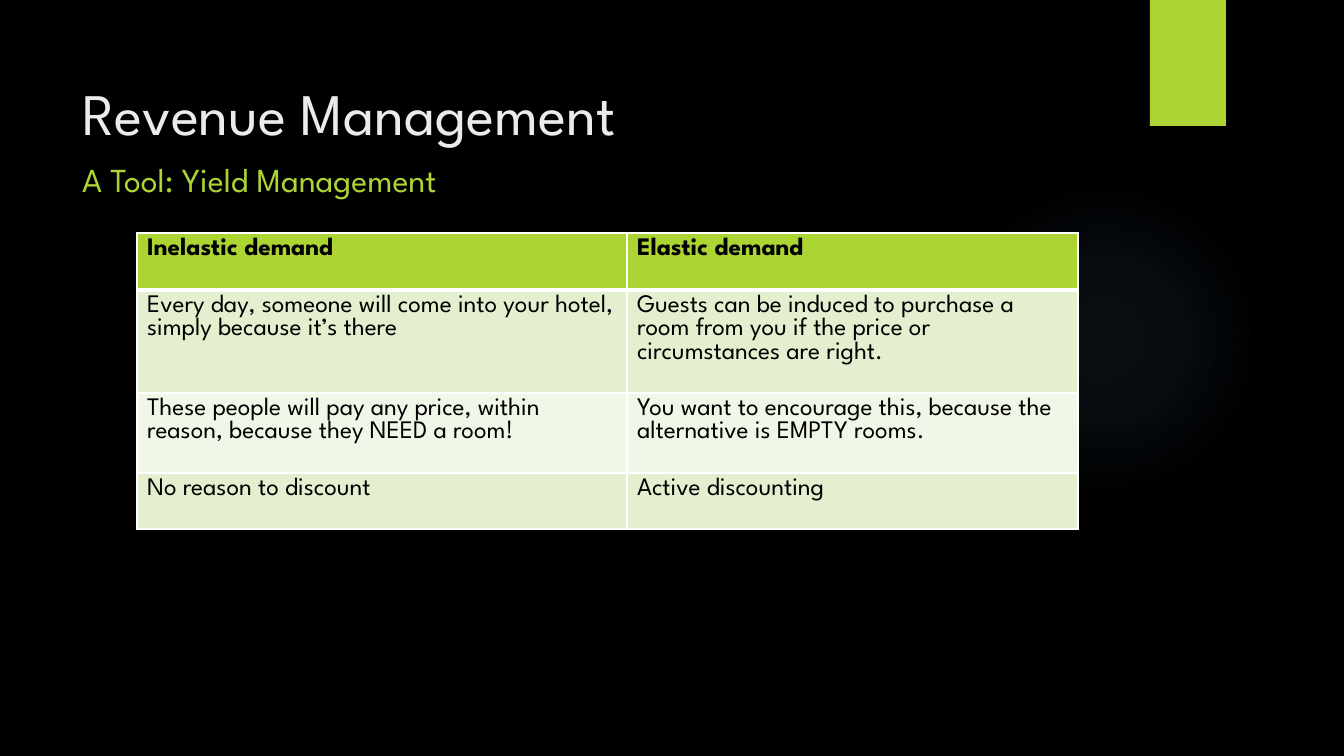
from lxml import etree
from pptx import Presentation
from pptx.dml.color import RGBColor as RGB
from pptx.enum.shapes import MSO_SHAPE as SHAPE
from pptx.enum.text import MSO_ANCHOR as ANCHOR, MSO_AUTO_SIZE as AUTO, PP_ALIGN as ALIGN
from pptx.oxml import parse_xml
from pptx.oxml.ns import nsdecls, qn
from pptx.util import Pt

PX = 914400 / 100.8
FONT = "League Spartan"
COLORS = {"bg": "000000", "title": "EBEBEB", "accent": "ACD433", "glow": "7AC4F0",
          "text": "000000", "band": "E3EFCE", "light": "F1F7E8", "border": "FFFFFF"}
ROWS = [
    ("Inelastic demand", "Elastic demand"),
    ("Every day, someone will come into your hotel, simply because it’s there",
     "Guests can be induced to purchase a room from you if the price or "
     "circumstances are right."),
    ("These people will pay any price, within reason, because they NEED a room!",
     "You want to encourage this, because the alternative is EMPTY rooms."),
    ("No reason to discount", "Active discounting"),
]
COL_WIDTHS = (490, 451)
ROW_HEIGHTS = (57, 103, 80, 56)


def px(n):
    return round(n * PX)


def rgb(name):
    return RGB.from_string(COLORS[name])


def set_attrs(obj, **values):
    for name, value in values.items():
        setattr(obj, name, value)


def add_run(p, text, size, color, bold=False):
    r = p.add_run()
    r.text = text
    set_attrs(r.font, name=FONT, size=Pt(size), bold=bold)
    r.font.color.rgb = rgb(color)


def add_plain(slide, kind, box):
    sp = slide.shapes.add_shape(kind, *map(px, box))
    sp.shadow.inherit = False
    sp.line.fill.background()
    return sp


def add_decor(slide, glow_box, tab_box):
    # Soft round glow, fading outwards
    glow = add_plain(slide, SHAPE.OVAL, glow_box)
    stops = "".join(
        f'<a:gs pos="{pos * 1000}"><a:srgbClr val="{COLORS["glow"]}">'
        f'<a:alpha val="{alpha * 1000}"/></a:srgbClr></a:gs>'
        for pos, alpha in ((0, 7), (36, 6), (69, 0), (100, 0)))
    grad = parse_xml(
        f'<a:gradFill {nsdecls("a")} rotWithShape="1"><a:gsLst>{stops}</a:gsLst>'
        '<a:path path="circle"><a:fillToRect l="50000" t="50000" r="50000" b="50000"/>'
        '</a:path></a:gradFill>')
    glow.element.spPr.find(qn("a:prstGeom")).addnext(grad)
    # Green tab at the top edge
    tab = add_plain(slide, SHAPE.RECTANGLE, tab_box)
    tab.fill.solid()
    tab.fill.fore_color.rgb = rgb("accent")


def add_title(slide, box):
    title = slide.shapes.title
    set_attrs(title, **dict(zip(("left", "top", "width", "height"), map(px, box))))
    tf = title.text_frame
    set_attrs(tf, word_wrap=True, auto_size=AUTO.NONE, vertical_anchor=ANCHOR.TOP)
    p = tf.paragraphs[0]
    set_attrs(p, alignment=ALIGN.LEFT, line_spacing=1.3)
    add_run(p, "Revenue Management", 42, "title")
    p.add_line_break()
    add_run(p, "A Tool: Yield Management", 24, "accent")


def set_borders(cell, bottom):
    tcPr = cell._tc.get_or_add_tcPr()
    for i, (side, width) in enumerate((("L", 1), ("R", 1), ("T", 1), ("B", bottom))):
        ln = etree.Element(qn(f"a:ln{side}"), w=str(Pt(width)))
        fill = etree.SubElement(ln, qn("a:solidFill"))
        etree.SubElement(fill, qn("a:srgbClr"), val=COLORS["border"])
        tcPr.insert(i, ln)


def add_demand_table(slide, left, top):
    table = slide.shapes.add_table(
        len(ROWS), len(COL_WIDTHS), px(left), px(top),
        px(sum(COL_WIDTHS)), px(sum(ROW_HEIGHTS))).table
    for col, width in zip(table.columns, COL_WIDTHS):
        col.width = px(width)
    for i, (row, height, texts) in enumerate(zip(table.rows, ROW_HEIGHTS, ROWS)):
        row.height = px(height)
        header = i == 0
        fill = "accent" if header else ("light", "band")[i % 2]
        for cell, text in zip(row.cells, texts):
            cell.fill.solid()
            cell.fill.fore_color.rgb = rgb(fill)
            set_borders(cell, 3 if header else 1)
            add_run(cell.text_frame.paragraphs[0], text, 18, "text", header)


def main():
    prs = Presentation()
    set_attrs(prs, slide_width=px(1344), slide_height=px(756))
    slide = prs.slides.add_slide(prs.slide_layouts[5])
    slide.background.fill.solid()
    slide.background.fill.fore_color.rgb = rgb("bg")
    add_decor(slide, glow_box=(949, 184, 310, 310), tab_box=(1150, 0, 76, 126))
    add_title(slide, (72, 50, 1037, 154))
    add_demand_table(slide, 137, 233)
    prs.save("out.pptx")


if __name__ == "__main__":
    main()
